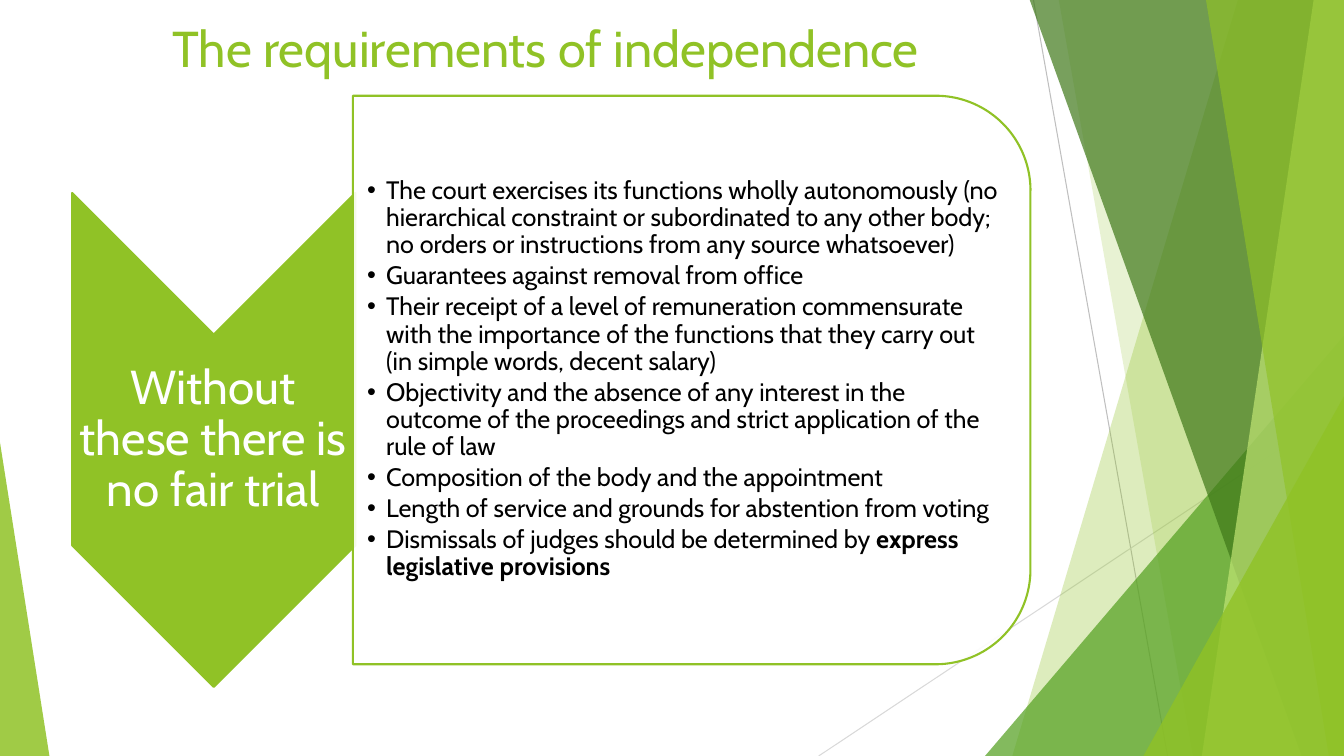
import dataclasses

import lxml.etree
import pptx
import pptx.dml.color
import pptx.enum.shapes
import pptx.enum.text
import pptx.oxml.ns
import pptx.util

Inches = pptx.util.Inches
Pt = pptx.util.Pt
SHAPE = pptx.enum.shapes.MSO_SHAPE
ALIGN = pptx.enum.text.PP_ALIGN
ANCHOR = pptx.enum.text.MSO_ANCHOR
qn = pptx.oxml.ns.qn


@dataclasses.dataclass(frozen=True)
class Theme:
    """Colours, font and type sizes of the slide."""
    font: str = "Cabin"
    green: str = "90C226"
    mid_green: str = "54A021"
    dark_green: str = "3F7819"
    pale_green: str = "C0E474"
    white: str = "FFFFFF"
    black: str = "000000"
    grey: str = "BFBFBF"
    light_grey: str = "D9D9D9"
    title_size: float = 36
    callout_size: float = 34
    list_size: float = 18
    outline: float = 1.5
    hairline: float = 0.75


T = Theme()
WIDTH, HEIGHT = 13.33, 7.5
TOP = -0.01

REQUIREMENTS = [
    ("The court exercises its functions wholly autonomously (no hierarchical constraint or "
     "subordinated to any other body; no orders or instructions from any source whatsoever)", ""),
    ("Guarantees against removal from office", ""),
    ("Their receipt of a level of remuneration commensurate with the importance of the "
     "functions that they carry out (in simple words, decent salary)", ""),
    ("Objectivity and the absence of any interest in the outcome of the proceedings and "
     "strict application of the rule of law", ""),
    ("Composition of the body and the appointment", ""),
    ("Length of service and grounds for abstention from voting", ""),
    ("Dismissals of judges should be determined by ", "express legislative provisions"),
]


def rgb(color):
    """Return a colour object for a hex string."""
    return pptx.dml.color.RGBColor.from_string(color)


def paint(sp, color, opacity=100, line=None):
    """Set fill, opacity and outline, without a shadow."""
    sp.shadow.inherit = False
    sp.fill.solid()
    sp.fill.fore_color.rgb = rgb(color)
    if opacity < 100:
        clr = sp.element.spPr.find(qn("a:solidFill"))[0]
        lxml.etree.SubElement(clr, qn("a:alpha"), val=str(opacity * 1000))
    if line:
        sp.line.color.rgb = rgb(line)
        sp.line.width = Pt(T.outline)
    else:
        sp.line.fill.background()


def add_preset(s, kind, box, color, opacity=100, line=None, rotation=0, adjust=None):
    """Add a painted preset shape."""
    sp = s.shapes.add_shape(kind, *map(Inches, box))
    sp.rotation = rotation
    if adjust is not None:
        sp.adjustments[0] = adjust
    paint(sp, color, opacity, line)


def add_facet(s, top_x, bottom_x, color, opacity):
    """Add a full-height facet that reaches the right edge."""
    points = [(WIDTH, TOP), (WIDTH, HEIGHT), (bottom_x, HEIGHT)]
    builder = s.shapes.build_freeform(Inches(top_x), Inches(TOP))
    builder.add_line_segments([(Inches(x), Inches(y)) for x, y in points])
    paint(builder.convert_to_shape(), color, opacity)


def add_hairline(s, start, end, color):
    """Add a thin straight line."""
    line = s.shapes.add_connector(pptx.enum.shapes.MSO_CONNECTOR.STRAIGHT,
                                  *map(Inches, start + end))
    line.line.color.rgb = rgb(color)
    line.line.width = Pt(T.hairline)
    lxml.etree.SubElement(line.element.spPr, qn("a:effectLst"))


def add_text(p, text, bold_tail="", size=18, color=T.black, align=ALIGN.LEFT,
             spacing=1.0, after=0, bullet_indent=0):
    """Write formatted text into a paragraph."""
    p.alignment = align
    p.line_spacing = spacing
    p.space_before = Pt(0)
    p.space_after = Pt(after)
    for part, bold in ((text, False), (bold_tail, True)):
        if part:
            r = p.add_run()
            r.text = part
            r.font.name = T.font
            r.font.size = Pt(size)
            r.font.bold = bold
            r.font.color.rgb = rgb(color)
    if bullet_indent:
        pPr = p._p.get_or_add_pPr()
        pPr.set("marL", str(Inches(bullet_indent)))
        pPr.set("indent", str(-Inches(bullet_indent)))
        lxml.etree.SubElement(pPr, qn("a:buFont"), typeface="Arial")
        lxml.etree.SubElement(pPr, qn("a:buChar"), char="•")


def set_frame(sp, box, anchor, insets):
    """Place a text shape and return its prepared text frame."""
    sp.left, sp.top, sp.width, sp.height = map(Inches, box)
    tf = sp.text_frame
    tf.word_wrap = True
    tf.auto_size = pptx.enum.text.MSO_AUTO_SIZE.NONE
    tf.vertical_anchor = anchor
    tf.margin_left, tf.margin_top, tf.margin_right, tf.margin_bottom = map(Inches, insets)
    return tf


def add_background(s):
    """Draw the faceted decoration."""
    add_hairline(s, (10.25, 0), (11.58, HEIGHT), T.grey)
    add_hairline(s, (WIDTH, 4.03), (8.12, HEIGHT), T.light_grey)
    add_facet(s, 12.28, 10.04, T.green, 30)
    add_facet(s, 10.5, 11.83, T.green, 20)
    add_preset(s, SHAPE.ISOSCELES_TRIANGLE, (9.77, 3.33, 3.56, 4.17), T.mid_green, 72, adjust=1)
    add_facet(s, 10.21, 12.91, T.dark_green, 70)
    add_facet(s, 13.03, 11.92, T.pale_green, 70)
    add_facet(s, 11.96, 13.18, T.green, 65)
    add_preset(s, SHAPE.ISOSCELES_TRIANGLE, (11.34, 3.93, 1.99, 3.57), T.green, 80, adjust=1)
    add_preset(s, SHAPE.ISOSCELES_TRIANGLE, (0, 4.39, 0.49, 3.11), T.green, 85, adjust=0)


def add_title(s):
    """Fill the title placeholder."""
    title = s.shapes.title
    s.shapes.element.append(title.element)
    tf = set_frame(title, (0.71, 0.12, 9.4, 0.84), ANCHOR.TOP, (0.1, 0.05, 0.1, 0.05))
    add_text(tf.paragraphs[0], "The requirements of independence",
             size=T.title_size, color=T.green, align=ALIGN.CENTER)


def add_callout(s):
    """Add the downward chevron and its message."""
    box = (0.71, 3.32, 2.81, 2.09)
    add_preset(s, SHAPE.CHEVRON, (-0.33, 2.96, 4.9, 2.81), T.green, line=T.green, rotation=90)
    sp = s.shapes.add_textbox(*map(Inches, box))
    tf = set_frame(sp, box, ANCHOR.MIDDLE, [0.02] * 4)
    add_text(tf.paragraphs[0], "Without these there is no fair trial", size=T.callout_size,
             color=T.white, align=ALIGN.CENTER, spacing=0.9)


def add_requirements(s):
    """Add the rounded panel and the bulleted list."""
    add_preset(s, SHAPE.ROUND_2_SAME_RECTANGLE, (4.04, 0.41, 5.64, 6.72), T.white, 90,
               line=T.green, rotation=90)
    body = s.placeholders[1]
    s.shapes.element.append(body.element)
    tf = set_frame(body, (3.5, 1.22, 6.44, 5.09), ANCHOR.MIDDLE, (0.14, 0.01, 0.01, 0.01))
    for i, (text, bold_tail) in enumerate(REQUIREMENTS):
        p = tf.add_paragraph() if i else tf.paragraphs[0]
        add_text(p, text, bold_tail, size=T.list_size, spacing=0.9,
                 after=0.15 * T.list_size, bullet_indent=0.19)


def main():
    """Build and save the slide."""
    prs = pptx.Presentation()
    prs.slide_width, prs.slide_height = Inches(WIDTH), Inches(HEIGHT)
    s = prs.slides.add_slide(prs.slide_layouts[1])
    add_background(s)
    add_title(s)
    add_callout(s)
    add_requirements(s)
    prs.save("out.pptx")


if __name__ == "__main__":
    main()
